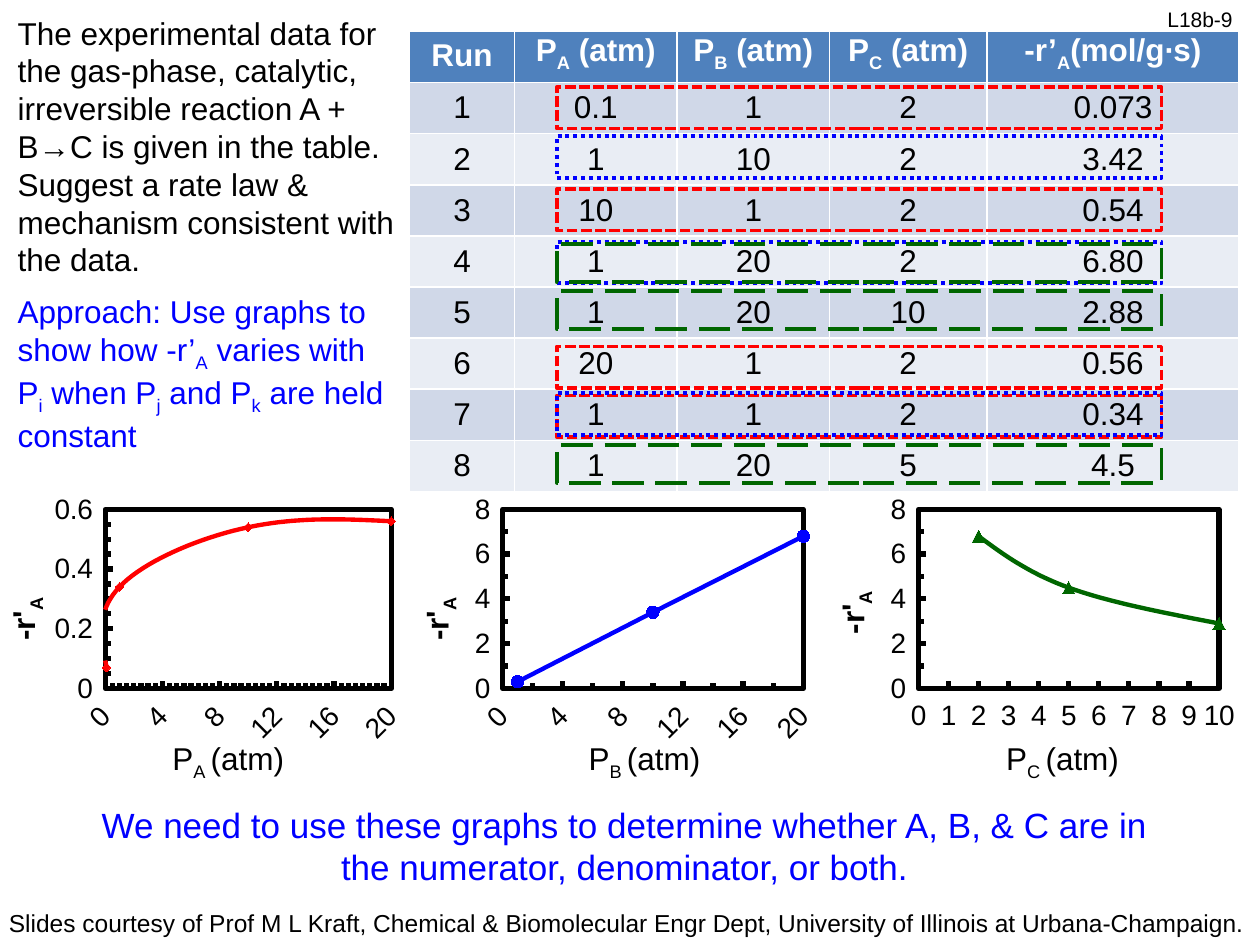
"""Build the rate-law slide: run data, highlighted runs and three rate graphs."""
from dataclasses import dataclass

from lxml import etree
from pptx import Presentation
from pptx import util as u
from pptx.chart import data as cd
from pptx.dml.color import RGBColor
from pptx.enum import chart as ch, dml, shapes, text
from pptx.oxml import parse_xml
from pptx.oxml.ns import nsdecls, qn


@dataclass(frozen=True)
class Theme:
    """Colours, font and type sizes."""
    font: str = "Arial"
    black: str = "000000"
    white: str = "FFFFFF"
    red: str = "FF0000"
    blue: str = "0000FF"
    green: str = "006600"
    head: str = "4F81BD"
    bands: tuple = ("D0D8E8", "E9EDF4")
    body: float = 18
    closing: float = 20
    credit: float = 14
    number: float = 12
    tick: float = 16


@dataclass(frozen=True)
class Note:
    """A text box; underscores enclose subscripts."""
    box: tuple
    words: str
    size: float
    color: str
    wrap: bool = True
    align: text.PP_ALIGN = text.PP_ALIGN.LEFT


@dataclass(frozen=True)
class Highlight:
    """Outlines of one style around several runs."""
    color: str
    dash: dml.MSO_LINE
    weight: float
    height: float
    tops: tuple


@dataclass(frozen=True)
class Graph:
    """One scatter chart of rate against a partial pressure."""
    left: float
    width: float
    gas: str
    points: tuple
    color: str
    marker: ch.XL_MARKER_STYLE
    marker_size: int
    smooth: bool
    x_axis: tuple
    y_axis: tuple
    plot_x: tuple
    label_turn: int


T = Theme()
HEADS = ("Run", "P_A_ (atm)", "P_B_ (atm)", "P_C_ (atm)", "-r’_A_(mol/g∙s)")
RUNS = (
    ("0.1", "1", "2", "0.073"), ("1", "10", "2", "3.42"),
    ("10", "1", "2", "0.54"), ("1", "20", "2", "6.80"),
    ("1", "20", "10", "2.88"), ("20", "1", "2", "0.56"),
    ("1", "1", "2", "0.34"), ("1", "20", "5", "4.5"),
)
COL_WIDTHS = (60, 93, 87, 90, 144)
ROW_HEIGHT = 29.2
NOTES = (
    Note((660, 0, 60, 21.6), "L18b-9", T.number, T.black, False),
    Note((-2, 515.5, 724, 24.5), "Slides courtesy of Prof M L Kraft, Chemical & Biomolecular Engr "
         "Dept, University of Illinois at Urbana-Champaign.", T.credit, T.black, False),
    Note((3, 4.3, 231, 160), "The experimental data for the gas-phase, catalytic, irreversible "
         "reaction A + B→C is given in the table. Suggest a rate law & mechanism consistent "
         "with the data.", T.body, T.black),
    Note((3, 163.4, 231, 94), "Approach: Use graphs to show how -r’_A_ varies with P_i_ when "
         "P_j_ and P_k_ are held constant", T.body, T.blue),
    Note((36, 455.8, 642, 55.4), "We need to use these graphs to determine whether A, B, & C are "
         "in the numerator, denominator, or both.", T.closing, T.blue, True, text.PP_ALIGN.CENTER),
)
HIGHLIGHTS = (
    Highlight(T.red, dml.MSO_LINE.SQUARE_DOT, 2, 23.8, (49.7, 108, 198, 226)),
    Highlight(T.blue, dml.MSO_LINE.ROUND_DOT, 2.25, 23.8, (77.8, 138.2, 224.6)),
    Highlight(T.green, dml.MSO_LINE.LONG_DASH, 2.25, 21.6, (139.7, 166.3, 254.2)),
)
GRAPHS = (
    Graph(0, 240.5, "A", ((0.1, 0.07), (1, 0.34), (10, 0.54), (20, 0.56)), T.red,
          ch.XL_MARKER_STYLE.DIAMOND, 5, True, (20, 4, 0.5), (0.6, 0.2, 0.05), (0.25, 0.68), -45),
    Graph(234, 242, "B", ((1, 0.3), (10, 3.4), (20, 6.8)), T.blue,
          ch.XL_MARKER_STYLE.CIRCLE, 7, False, (20, 4, 2), (8, 2, 1), (0.22, 0.71), -45),
    Graph(471.6, 242, "C", ((2, 6.8), (5, 4.5), (10, 2.9)), T.green,
          ch.XL_MARKER_STYLE.TRIANGLE, 7, True, (10, 1, 1), (8, 2, 1), (0.22, 0.71), 0),
)


def rgb(code: str) -> RGBColor:
    """Return a colour from its hex code."""
    return RGBColor.from_string(code)


def style(font, size: float, color: str, bold: bool = False) -> None:
    """Format a font."""
    font.name, font.size, font.bold = T.font, u.Pt(size), bold
    font.color.rgb = rgb(color)


def write(p, words: str, size: float, color: str, bold: bool = False) -> None:
    """Write words into a paragraph, lowering the parts between underscores."""
    for i, part in enumerate(words.split("_")):
        if part:
            r = p.add_run()
            r.text = part
            style(r.font, size, color, bold)
            if i % 2:
                r._r.get_or_add_rPr().set("baseline", "-25000")


def add_note(s, note: Note) -> None:
    """Add a text box."""
    tf = s.shapes.add_textbox(*map(u.Pt, note.box)).text_frame
    tf.word_wrap = note.wrap
    p = tf.paragraphs[0]
    p.alignment = note.align
    write(p, note.words, note.size, note.color)


def add_runs(s) -> None:
    """Add the table of runs."""
    rows = [HEADS] + [(str(n), *run) for n, run in enumerate(RUNS, 1)]
    tbl = s.shapes.add_table(len(rows), len(HEADS), u.Pt(234), u.Pt(18),
                             u.Pt(sum(COL_WIDTHS)), u.Pt(ROW_HEIGHT * len(rows))).table
    for col, width in zip(tbl.columns, COL_WIDTHS):
        col.width = u.Pt(width)
    for i, row in enumerate(rows):
        tbl.rows[i].height = u.Pt(ROW_HEIGHT)
        for j, words in enumerate(row):
            cell = tbl.cell(i, j)
            cell.fill.solid()
            cell.fill.fore_color.rgb = rgb(T.bands[(i - 1) % 2] if i else T.head)
            if i:
                cell.vertical_anchor = text.MSO_ANCHOR.MIDDLE
            p = cell.text_frame.paragraphs[0]
            p.alignment, p.line_spacing = text.PP_ALIGN.CENTER, u.Pt(20)
            write(p, words, T.body, T.black if i else T.white, not i)


def add_highlight(s, mark: Highlight) -> None:
    """Outline the runs that belong to one graph."""
    for top in mark.tops:
        sp = s.shapes.add_shape(shapes.MSO_SHAPE.RECTANGLE, u.Pt(318.2), u.Pt(top),
                                u.Pt(345.6), u.Pt(mark.height))
        sp.shadow.inherit = False
        sp.fill.background()
        sp.line.color.rgb = rgb(mark.color)
        sp.line.width, sp.line.dash_style = u.Pt(mark.weight), mark.dash


def format_axis(axis, scale: tuple, title: str, bold: bool, turn: int) -> None:
    """Set scale, ticks, line and title of an axis."""
    axis.minimum_scale = 0
    axis.maximum_scale, axis.major_unit, minor = scale
    axis.has_major_gridlines = False
    axis.major_tick_mark = ch.XL_TICK_MARK.INSIDE
    if minor < axis.major_unit:
        axis.minor_tick_mark = ch.XL_TICK_MARK.INSIDE
        etree.SubElement(axis._element, qn("c:minorUnit")).set("val", str(minor))
    axis.tick_label_position = ch.XL_TICK_LABEL_POSITION.LOW
    axis.format.line.color.rgb = rgb(T.black)
    axis.format.line.width = u.Pt(3)
    style(axis.tick_labels.font, T.tick, T.black)
    axis._element.find(qn("c:txPr")).find(qn("a:bodyPr")).set("rot", str(turn * 60000))
    write(axis.axis_title.text_frame.paragraphs[0], title, T.body, T.black, bold)


def format_plot_area(chart, plot_x: tuple) -> None:
    """Place and frame the plot area on a clear chart background."""
    ns = nsdecls("c", "a")
    area = chart._chartSpace.chart.plotArea
    for old in area.findall(qn("c:layout")):
        area.remove(old)
    sizes = zip("xywh", (plot_x[0], 0.08, plot_x[1], 0.59))
    values = "".join(f'<c:{k} val="{v}"/>' for k, v in sizes)
    area.insert(0, parse_xml(
        f'<c:layout {ns}><c:manualLayout><c:layoutTarget val="inner"/><c:xMode val="edge"/>'
        f'<c:yMode val="edge"/>{values}</c:manualLayout></c:layout>'))
    area.append(parse_xml(
        f'<c:spPr {ns}><a:noFill/><a:ln w="{u.Pt(3)}"><a:solidFill><a:srgbClr val="{T.black}"/>'
        '</a:solidFill></a:ln></c:spPr>'))
    chart._chartSpace.chart.addnext(parse_xml(
        f'<c:spPr {ns}><a:noFill/><a:ln><a:noFill/></a:ln></c:spPr>'))


def add_graph(s, graph: Graph) -> None:
    """Add one scatter chart."""
    data = cd.XyChartData()
    points = data.add_series("Series 1")
    for x, y in graph.points:
        points.add_data_point(x, y)
    kind = ch.XL_CHART_TYPE.XY_SCATTER_SMOOTH if graph.smooth else ch.XL_CHART_TYPE.XY_SCATTER_LINES
    chart = s.shapes.add_chart(kind, u.Pt(graph.left), u.Pt(277.2), u.Pt(graph.width),
                               u.Pt(173.5), data).chart
    chart.has_title = chart.has_legend = False
    style(chart.font, 10, T.black)
    plot = chart.plots[0]
    plot.vary_by_categories = False
    ser = plot.series[0]
    ser._element.find(qn("c:smooth")).set("val", str(int(graph.smooth)))
    ser.format.line.color.rgb = rgb(graph.color)
    ser.format.line.width = u.Pt(2.5)
    ser.marker.style, ser.marker.size = graph.marker, graph.marker_size
    ser.marker.format.fill.solid()
    ser.marker.format.fill.fore_color.rgb = rgb(graph.color)
    ser.marker.format.line.color.rgb = rgb(graph.color)
    format_axis(chart.category_axis, graph.x_axis, f"P_{graph.gas} _(atm)", False, graph.label_turn)
    format_axis(chart.value_axis, graph.y_axis, "-r'_A_", True, 0)
    body = chart.value_axis.axis_title.text_frame._txBody.find(qn("a:bodyPr"))
    body.set("rot", str(-90 * 60000))
    body.set("vert", "horz")
    format_plot_area(chart, graph.plot_x)


def main() -> None:
    """Build and save the slide."""
    prs = Presentation()
    prs.slide_width, prs.slide_height = u.Pt(720), u.Pt(540)
    s = prs.slides.add_slide(prs.slide_layouts[6])
    add_runs(s)
    for items, draw in ((NOTES, add_note), (HIGHLIGHTS, add_highlight), (GRAPHS, add_graph)):
        for item in items:
            draw(s, item)
    prs.save("out.pptx")


if __name__ == "__main__":
    main()
